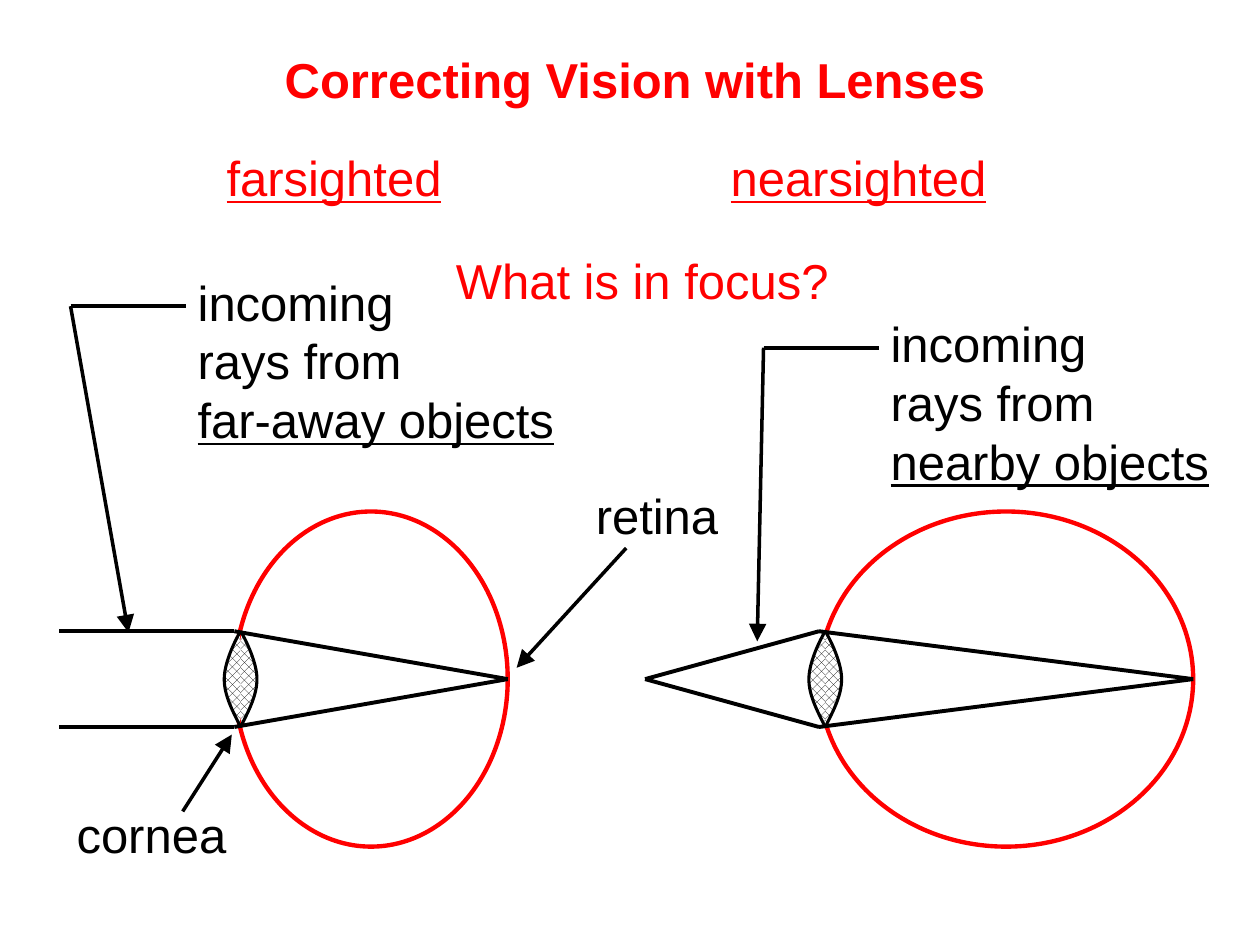
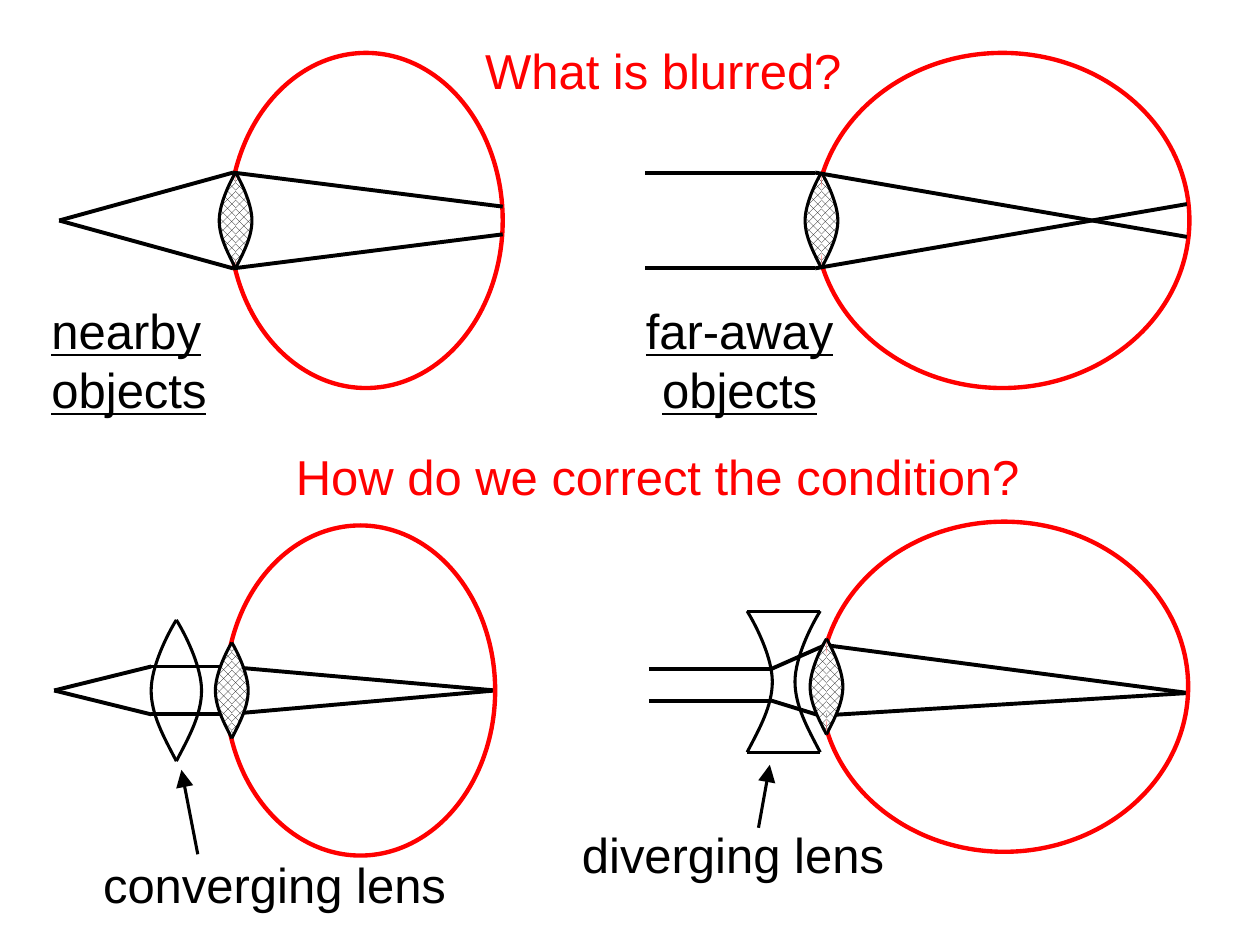
from itertools import pairwise

from lxml import etree
from pptx import Presentation
from pptx.dml.color import RGBColor
from pptx.enum.dml import MSO_PATTERN
from pptx.enum.shapes import MSO_CONNECTOR, MSO_SHAPE
from pptx.enum.text import MSO_ANCHOR, MSO_AUTO_SIZE, PP_ALIGN
from pptx.oxml.ns import qn
from pptx.util import Pt

PX = 9144  # EMU in one px, 100 px to the inch
COLORS = {"red": "FF0000", "black": "000000", "white": "FFFFFF"}
FONT, TEXT_SIZE = "Arial", 28
EYE_WIDTH, RAY_WIDTH, LENS_WIDTH, CALLOUT_WIDTH = 2.5, 2.25, 1.75, 2
PUPIL_HEIGHT, PUPIL_BULGE, PUPIL_INSET = 76, 13, 5
GLASS_HEIGHT, GLASS_BULGE = 112, 20
TITLE_ONLY = 5
STRAIGHT, OVAL = MSO_CONNECTOR.STRAIGHT, MSO_SHAPE.OVAL
HATCH = MSO_PATTERN.PERCENT_50
MIDDLE, FIT_SHAPE = MSO_ANCHOR.MIDDLE, MSO_AUTO_SIZE.SHAPE_TO_FIT_TEXT
LEFT, CENTER = PP_ALIGN.LEFT, PP_ALIGN.CENTER

# Start, then two cubic curves, from the bottom tip of a lens to its top tip
LENS_SIDE = [
    (0, 1),
    (0.5, 0.83), (1, 0.67), (1, 0.5),
    (1, 0.33), (0.35, 0.1), (0, 0),
]


def color(name):
    return RGBColor.from_string(COLORS[name])


def emu(*lengths):
    return [round(length * PX) for length in lengths]


# Text
def write(shape, box, text, ink="black", bold=False, underlined=(), align=LEFT):
    """Place a text shape; underlined holds the indexes of underlined lines."""
    shape.left, shape.top, shape.width, shape.height = emu(*box)
    frame = shape.text_frame
    frame.text = text
    frame.word_wrap = False
    frame.auto_size = FIT_SHAPE
    frame.vertical_anchor = MIDDLE
    for index, para in enumerate(frame.paragraphs):
        para.alignment = align
        for span in para.runs:
            span.font.name = FONT
            span.font.size = Pt(TEXT_SIZE)
            span.font.bold = bold
            span.font.underline = index in underlined
            span.font.color.rgb = color(ink)


def label(page, box, text, **style):
    write(page.shapes.add_textbox(*emu(*box)), box, text, **style)


# Lines and curves
def line(page, start, end, width, arrow=False):
    connector = page.shapes.add_connector(STRAIGHT, *emu(*start, *end))
    connector.line.color.rgb = color("black")
    connector.line.width = Pt(width)
    properties = connector._element.spPr
    if arrow:
        outline = properties.find(qn("a:ln"))
        etree.SubElement(outline, qn("a:tailEnd"), type="triangle", w="lg", len="lg")
    etree.SubElement(properties, qn("a:effectLst"))


def bend(shape):
    """Turn every three straight segments of a freeform into one cubic curve."""
    segments = list(shape._element.iter(qn("a:lnTo")))
    for first in range(0, len(segments), 3):
        trio = segments[first:first + 3]
        curve = etree.Element(qn("a:cubicBezTo"))
        trio[0].addprevious(curve)
        for segment in trio:
            curve.append(segment[0])
            segment.getparent().remove(segment)


def lens_side(page, x, top, height, bulge, hatched=False):
    """Draw one side of a lens; a negative bulge bends to the left."""
    points = [emu(x + bulge * u, top + height * v) for u, v in LENS_SIDE]
    builder = page.shapes.build_freeform(*points[0])
    builder.add_line_segments(points[1:], close=False)
    side = builder.convert_to_shape()
    bend(side)
    side.shadow.inherit = False
    side.line.color.rgb = color("black")
    side.line.width = Pt(LENS_WIDTH)
    if hatched:
        side.fill.patterned()
        side.fill.pattern = HATCH
        side.fill.fore_color.rgb = color("black")
        side.fill.back_color.rgb = color("white")
    else:
        side.fill.background()


# Parts of the diagrams
def convex_lens(page, x, top, height, bulge, hatched=False):
    for direction in (-1, 1):
        lens_side(page, x, top, height, direction * bulge, hatched)


def concave_lens(page, box):
    left, top, width, height = box
    right = left + width
    lens_side(page, left, top, height, GLASS_BULGE)
    lens_side(page, right, top, height, -GLASS_BULGE)
    for y in (top, top + height):
        line(page, (left, y), (right, y), LENS_WIDTH)


def eye(page, box):
    left, top, _, height = box
    ball = page.shapes.add_shape(OVAL, *emu(*box))
    ball.shadow.inherit = False
    ball.fill.background()
    ball.line.color.rgb = color("red")
    ball.line.width = Pt(EYE_WIDTH)
    pupil_top = top + (height - PUPIL_HEIGHT) / 2
    convex_lens(page, left + PUPIL_INSET, pupil_top, PUPIL_HEIGHT, PUPIL_BULGE, True)


def rays(page, eye_box, upper, lower=None):
    """Draw two rays, measured from the middle of the eye box's left side.

    The lower ray mirrors the upper one unless it is given.
    """
    left, top, _, height = eye_box
    middle = top + height / 2
    for ray in (upper, lower or [(x, -y) for x, y in upper]):
        points = [(left + x, middle + y) for x, y in ray]
        for start, end in pairwise(points):
            line(page, start, end, RAY_WIDTH)


def incoming_note(page, box, source, target):
    """Three lines of text with a bent arrow from the first line to the rays."""
    left, top, _, _ = box
    corner = (left - 91, top + 32)
    line(page, corner, target, CALLOUT_WIDTH, arrow=True)
    line(page, corner, (left + 1, top + 32), CALLOUT_WIDTH)
    label(page, box, f"incoming\nrays from\n{source}", underlined=(2,))


def pointed_label(page, box, text, start, target, width=CALLOUT_WIDTH):
    line(page, start, target, width, arrow=True)
    label(page, box, text)


# Slides
def focus_slide(deck):
    page = deck.slides.add_slide(deck.slide_layouts[TITLE_ONLY])
    write(page.shapes.title, (216, 34, 578, 57), "Correcting Vision with Lenses",
          ink="red", bold=True)
    label(page, (170, 112, 194, 57), "farsighted", ink="red", underlined=(0,))
    label(page, (570, 112, 226, 57), "nearsighted", ink="red", underlined=(0,))
    label(page, (352, 194, 327, 57), "What is in focus?", ink="red")

    short_eye, long_eye = (186, 406, 217, 266), (650, 406, 297, 266)
    eye(page, short_eye)
    rays(page, short_eye, [(-139, -38), (0, -38), (217, 0)])
    eye(page, long_eye)
    rays(page, long_eye, [(-138, 0), (0, -38), (297, 0)])

    incoming_note(page, (147, 211, 305, 150), "far-away objects", (102, 502))
    incoming_note(page, (697, 244, 276, 150), "nearby objects", (601, 509))
    pointed_label(page, (463, 380, 128, 57), "retina", (497, 435), (410, 530))
    pointed_label(page, (51, 633, 150, 57), "cornea", (145, 644), (184, 583))


def blurred_slide(deck):
    page = deck.slides.add_slide(deck.slide_layouts[TITLE_ONLY])
    write(page.shapes.title, (375, 27, 315, 57), "What is blurred?", ink="red")

    # Blurred sight
    short_eye, long_eye = (182, 42, 217, 266), (647, 42, 297, 266)
    eye(page, short_eye)
    rays(page, short_eye, [(-135, 0), (3, -38), (217, -11)])
    eye(page, long_eye)
    rays(page, long_eye, [(-135, -38), (0, -38), (295, 13)])
    label(page, (31, 234, 145, 103), "nearby\nobjects", underlined=(0, 1))
    label(page, (502, 234, 170, 103), "far-away\nobjects", underlined=(0, 1),
          align=CENTER)

    # Corrected sight: the lens of each eye covers the rays
    label(page, (225, 349, 607, 57), "How do we correct the condition?", ink="red")
    short_eye, long_eye = (179, 417, 214, 262), (651, 414, 292, 262)
    convex_lens(page, 140, 492, GLASS_HEIGHT, GLASS_BULGE)
    rays(page, short_eye, [(-136, 0), (-59, -19), (0, -19), (214, 0)])
    eye(page, short_eye)
    concave_lens(page, (593, 485, 58, GLASS_HEIGHT))
    rays(page, long_eye,
         upper=[(-136, -14), (-39, -14), (4, -33), (292, 5)],
         lower=[(-136, 11), (-39, 11), (0, 23), (292, 5)])
    eye(page, long_eye)
    pointed_label(page, (72, 673, 304, 57), "converging lens",
                  (157, 678), (144, 611), LENS_WIDTH)
    pointed_label(page, (452, 649, 272, 57), "diverging lens",
                  (602, 657), (611, 607), LENS_WIDTH)


def main():
    deck = Presentation()
    deck.slide_width, deck.slide_height = emu(1000, 750)
    focus_slide(deck)
    blurred_slide(deck)
    deck.save("out.pptx")


if __name__ == "__main__":
    main()
